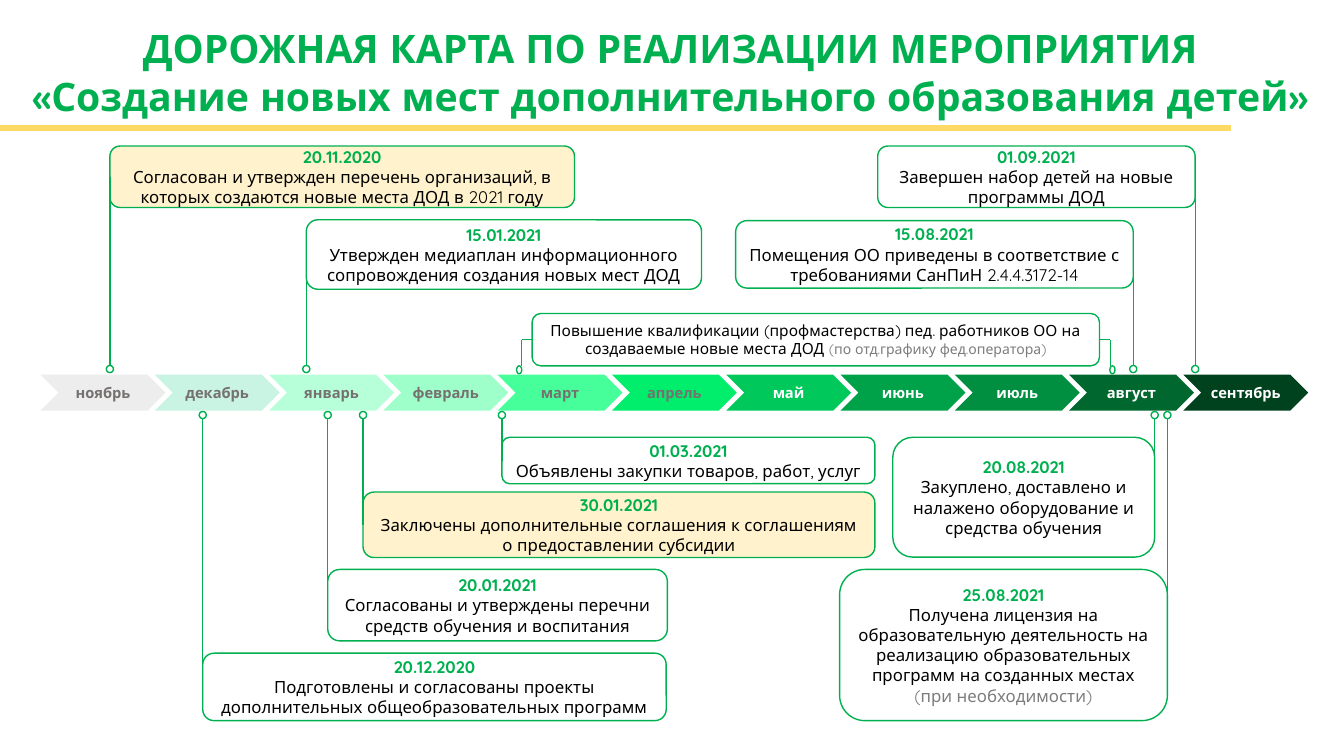
from lxml import etree
from pptx import Presentation
from pptx.dml.color import RGBColor
from pptx.enum.shapes import MSO_CONNECTOR, MSO_SHAPE
from pptx.enum.text import MSO_ANCHOR, PP_ALIGN
from pptx.oxml.ns import qn
from pptx.util import Cm, Pt

STRAIGHT = MSO_CONNECTOR.STRAIGHT
CHEVRON, OVAL = MSO_SHAPE.CHEVRON, MSO_SHAPE.OVAL
RECTANGLE, ROUNDED = MSO_SHAPE.RECTANGLE, MSO_SHAPE.ROUNDED_RECTANGLE
TOP, MIDDLE = MSO_ANCHOR.TOP, MSO_ANCHOR.MIDDLE
CENTER = PP_ALIGN.CENTER
LEFT_SIDE, RIGHT_SIDE = 1, 3

FONT = "Quicksand"
GREEN = RGBColor(0x00, 0xB0, 0x50)
YELLOW = RGBColor(0xFF, 0xD9, 0x66)
CREAM = RGBColor(0xFF, 0xF2, 0xCC)
WHITE = RGBColor(0xFF, 0xFF, 0xFF)
BLACK = RGBColor(0x00, 0x00, 0x00)
NOTE_GRAY = RGBColor(0x7C, 0x7C, 0x7C)
MONTH_GRAY = RGBColor(0x76, 0x71, 0x71)

TITLE = ["ДОРОЖНАЯ КАРТА ПО РЕАЛИЗАЦИИ МЕРОПРИЯТИЯ",
         "«Создание новых мест дополнительного образования детей»"]

# month, fill, text colour
MONTHS = [
    ("ноябрь", "EDEDED", MONTH_GRAY),
    ("декабрь", "C9F3E3", MONTH_GRAY),
    ("январь", "B7FFD8", MONTH_GRAY),
    ("февраль", "9FFFCA", MONTH_GRAY),
    ("март", "47FF9A", MONTH_GRAY),
    ("апрель", "00EE6C", MONTH_GRAY),
    ("май", "00C85A", WHITE),
    ("июнь", "00A249", WHITE),
    ("июль", "008E40", WHITE),
    ("август", "00682F", WHITE),
    ("сентябрь", "00421E", WHITE),
]

# date, text, note, (left, top, width, height) in cm, fill, side with the pin
EVENTS = [
    ("20.11.2020", "Согласован и утвержден перечень организаций, в которых "
     "создаются новые места ДОД в 2021 году", "",
     (2.77, 3.68, 11.71, 1.55), CREAM, LEFT_SIDE),
    ("15.01.2021", "Утвержден медиаплан информационного сопровождения создания "
     "новых мест ДОД", "", (7.72, 5.54, 9.96, 1.75), WHITE, LEFT_SIDE),
    ("15.08.2021", "Помещения ОО приведены в соответствие с требованиями "
     "СанПиН 2.4.4.3172-14", "", (18.54, 5.56, 10.02, 1.7), WHITE, RIGHT_SIDE),
    ("01.09.2021", "Завершен набор детей на новые программы ДОД", "",
     (22.12, 3.68, 8, 1.55), WHITE, RIGHT_SIDE),
    ("01.03.2021", "Объявлены закупки товаров, работ, услуг", "",
     (12.65, 11.02, 9.4, 1.17), WHITE, LEFT_SIDE),
    ("30.01.2021", "Заключены дополнительные соглашения к соглашениям "
     "о предоставлении субсидии", "", (9.15, 12.4, 12.9, 1.65), CREAM, LEFT_SIDE),
    ("20.01.2021", "Согласованы и утверждены перечни средств обучения "
     "и воспитания", "", (8.26, 14.35, 8.56, 1.8), WHITE, LEFT_SIDE),
    ("20.12.2020", "Подготовлены и согласованы проекты дополнительных "
     "общеобразовательных программ", "",
     (5.11, 16.46, 11.68, 1.7), WHITE, LEFT_SIDE),
    ("20.08.2021", "Закуплено, доставлено и налажено оборудование и средства "
     "обучения", "", (22.5, 11.02, 6.6, 3.02), WHITE, RIGHT_SIDE),
    ("25.08.2021", "Получена лицензия на образовательную деятельность на "
     "реализацию образовательных программ на созданных местах ",
     "(при необходимости)", (21.16, 14.35, 8.26, 3.81), WHITE, RIGHT_SIDE),
]

TRAINING = ("Повышение квалификации (профмастерства) пед. работников ОО "
            "на создаваемые новые места ДОД ")
TRAINING_NOTE = "(по отд.графику фед.оператора)"
TRAINING_BOX = (13.41, 7.9, 14.3, 1.32)
TRAINING_ARM = 0.26

BAND_LEFT, BAND_TOP, BAND_HEIGHT = 1.02, 9.44, 0.91
MONTH_STEP, MONTH_WIDTH = 2.88, 3.15
PIN_SIZE = 0.18
PIN_ABOVE, PIN_BELOW = 9.3, 10.46

presentation = Presentation()
presentation.slide_width, presentation.slide_height = Cm(33.87), Cm(19.05)
slide = presentation.slides.add_slide(presentation.slide_layouts[6])


def add_box(kind, box, fill=None, line=None, anchor=MIDDLE):
    shape = slide.shapes.add_shape(kind, *[Cm(value) for value in box])
    shape.shadow.inherit = False
    if fill is None:
        shape.fill.background()
    else:
        shape.fill.solid()
        shape.fill.fore_color.rgb = fill
    if line is None:
        shape.line.fill.background()
    else:
        shape.line.color.rgb = line
        shape.line.width = Pt(1)
    shape.text_frame.word_wrap = True
    shape.text_frame.vertical_anchor = anchor
    return shape


def add_text(paragraph, text, size=12, color=BLACK, bold=False):
    paragraph.alignment = CENTER
    run = paragraph.add_run()
    run.text = text
    run.font.name = FONT
    run.font.size = Pt(size)
    run.font.bold = bold
    run.font.color.rgb = color


def add_line(start, end, color=GREEN, width=1):
    connector = slide.shapes.add_connector(
        STRAIGHT, *[Cm(value) for value in start + end])
    connector.line.color.rgb = color
    connector.line.width = Pt(width)
    etree.SubElement(connector._element.spPr, qn("a:effectLst"))
    return connector


def add_title():
    frame = add_box(RECTANGLE, (0.56, 0.5, 32.66, 2.64), anchor=TOP).text_frame
    frame.margin_left = frame.margin_right = 0
    for index, text in enumerate(TITLE):
        paragraph = frame.add_paragraph() if index else frame.paragraphs[0]
        add_text(paragraph, text, size=28, color=GREEN, bold=True)


def add_months():
    for index, (month, fill, color) in enumerate(MONTHS):
        box = (BAND_LEFT + index * MONTH_STEP, BAND_TOP, MONTH_WIDTH, BAND_HEIGHT)
        frame = add_box(CHEVRON, box, RGBColor.from_string(fill)).text_frame
        frame.margin_left = frame.margin_right = 0
        add_text(frame.paragraphs[0], month, size=10.5, color=color, bold=True)


def add_event(date, text, note, box, fill, side):
    """Draw a dated card and the line from its side to a pin on the band."""
    left, top, width, height = box
    card = add_box(ROUNDED, box, fill, GREEN)
    add_text(card.text_frame.paragraphs[0], date, color=GREEN, bold=True)
    paragraph = card.text_frame.add_paragraph()
    add_text(paragraph, text)
    if note:
        add_text(paragraph, note, color=NOTE_GRAY)

    pin_x = left if side == LEFT_SIDE else left + width
    pin_y = PIN_ABOVE if top < BAND_TOP else PIN_BELOW
    line = add_line((pin_x, pin_y), (pin_x, top + height / 2))
    line.end_connect(card, side)
    add_box(OVAL, (pin_x - PIN_SIZE / 2, pin_y - PIN_SIZE / 2,
                   PIN_SIZE, PIN_SIZE), WHITE, GREEN)


def add_training():
    """Draw the training card with a bent arm and a pin on each side."""
    left, top, width, height = TRAINING_BOX
    card = add_box(ROUNDED, TRAINING_BOX, WHITE, GREEN, TOP)
    paragraph = card.text_frame.paragraphs[0]
    add_text(paragraph, TRAINING, size=11)
    add_text(paragraph, TRAINING_NOTE, size=10, color=NOTE_GRAY)

    middle, pin_top, pin_width = top + height / 2, 9.22, 0.13
    for side, edge, bend, pin_left in (
            (LEFT_SIDE, left, left - TRAINING_ARM,
             left - TRAINING_ARM - pin_width),
            (RIGHT_SIDE, left + width, left + width + TRAINING_ARM,
             left + width + TRAINING_ARM)):
        arm = add_line((edge, middle), (bend, middle), width=0.5)
        arm.begin_connect(card, side)
        add_line((bend, middle), (bend, pin_top), width=0.5)
        add_box(OVAL, (pin_left, pin_top, pin_width, 0.2), line=GREEN)


add_title()
add_months()
for event in EVENTS:
    add_event(*event)
add_training()
add_line((0, 3.23), (31.01, 3.23), color=YELLOW, width=4.5)

presentation.save("out.pptx")
